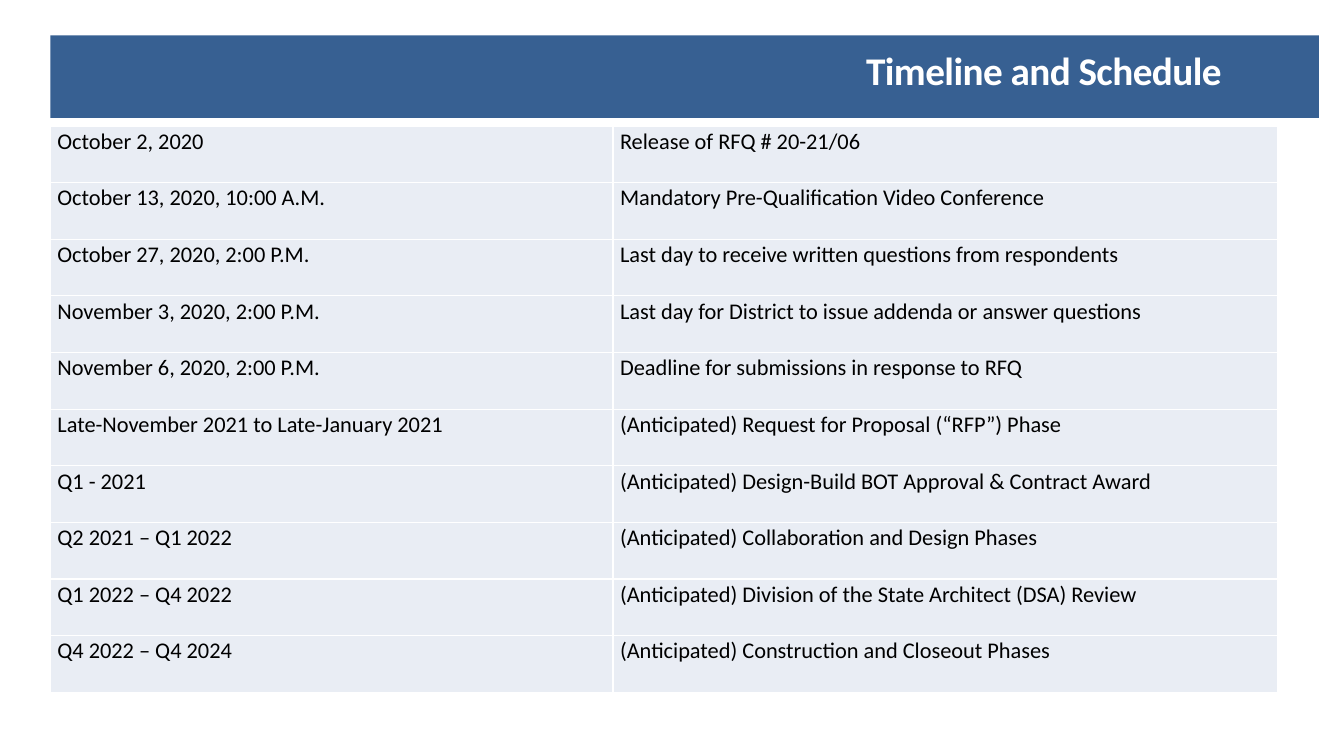
import pptx
import pptx.dml.color
import pptx.enum.text
import pptx.oxml
import pptx.oxml.ns
import pptx.util
from pptx.util import Inches, Pt

BLUE = pptx.dml.color.RGBColor(0x37, 0x60, 0x92)
PALE = pptx.dml.color.RGBColor(0xE9, 0xED, 0xF4)
WHITE = pptx.dml.color.RGBColor(0xFF, 0xFF, 0xFF)
BLACK = pptx.dml.color.RGBColor(0x00, 0x00, 0x00)
FONT = "Calibri"

MILESTONES = [
    ("October 2, 2020", "Release of RFQ # 20-21/06"),
    ("October 13, 2020, 10:00 A.M.", "Mandatory Pre-Qualification Video Conference"),
    ("October 27, 2020, 2:00 P.M.", "Last day to receive written questions from respondents"),
    ("November 3, 2020, 2:00 P.M.", "Last day for District to issue addenda or answer questions"),
    ("November 6, 2020, 2:00 P.M.", "Deadline for submissions in response to RFQ"),
    ("Late-November 2021 to Late-January 2021", "(Anticipated) Request for Proposal (“RFP”) Phase"),
    ("Q1 - 2021", "(Anticipated) Design-Build BOT Approval & Contract Award"),
    ("Q2 2021 – Q1 2022", "(Anticipated) Collaboration and Design Phases"),
    ("Q1 2022 – Q4 2022", "(Anticipated) Division of the State Architect (DSA) Review"),
    ("Q4 2022 – Q4 2024", "(Anticipated) Construction and Closeout Phases"),
]


def style_paragraph(para, size, color, bold=False):
    para.alignment = pptx.enum.text.PP_ALIGN.LEFT
    para.font.name = FONT
    para.font.size = Pt(size)
    para.font.bold = bold
    para.font.color.rgb = color


def add_title_band(slide, left, top, width, height):
    title = slide.shapes.title
    title.left, title.top, title.width, title.height = left, top, width, height
    title.fill.solid()
    title.fill.fore_color.rgb = BLUE
    frame = title.text_frame
    frame.text = "Timeline and Schedule"
    frame.word_wrap = True
    frame.auto_size = pptx.enum.text.MSO_AUTO_SIZE.NONE
    frame.vertical_anchor = pptx.enum.text.MSO_ANCHOR.TOP
    frame.margin_left = frame.margin_right = frame.margin_bottom = 0
    frame.margin_top = Inches(0.11)
    para = frame.paragraphs[0]
    style_paragraph(para, 28, WHITE, bold=True)
    para.space_before = Pt(0)
    properties = para._p.get_or_add_pPr()
    properties.set("marL", str(Inches(8.09)))
    properties.set("indent", "0")
    para.runs[0].font._element.set("spc", "-40")


def set_cell_borders(cell):
    """Put a thin white line on every side, ahead of the cell's fill."""
    properties = cell._tc.get_or_add_tcPr()
    for position, side in enumerate(("lnL", "lnR", "lnT", "lnB")):
        line = pptx.oxml.parse_xml(
            f'<a:{side} {pptx.oxml.ns.nsdecls("a")} w="{Pt(1)}"><a:solidFill>'
            f'<a:srgbClr val="{WHITE}"/></a:solidFill></a:{side}>'
        )
        properties.insert(position, line)


def fill_cell(cell, text):
    cell.text = text
    cell.margin_left = cell.margin_right = Inches(0.07)
    cell.margin_top = cell.margin_bottom = 0
    cell.fill.solid()
    cell.fill.fore_color.rgb = PALE
    para = cell.text_frame.paragraphs[0]
    style_paragraph(para, 16, BLACK)
    para.line_spacing = 1.07
    set_cell_borders(cell)


def add_schedule(slide, left, top, width, height):
    table = slide.shapes.add_table(len(MILESTONES), 2, left, top, width, height).table
    table.first_row = table.horz_banding = False
    table.columns[0].width = Inches(5.58)
    table.columns[1].width = width - Inches(5.58)
    for row, milestone in enumerate(MILESTONES):
        for column, text in enumerate(milestone):
            fill_cell(table.cell(row, column), text)


def main():
    deck = pptx.Presentation()
    deck.slide_width, deck.slide_height = Inches(13.33), Inches(7.5)
    slide = deck.slides.add_slide(deck.slide_layouts.get_by_name("Title Only"))
    add_title_band(slide, Inches(0.5), Inches(0.35), Inches(12.58), Inches(0.82))
    add_schedule(slide, Inches(0.5), Inches(1.25), Inches(12.17), Inches(5.62))
    deck.save("out.pptx")


if __name__ == "__main__":
    main()
